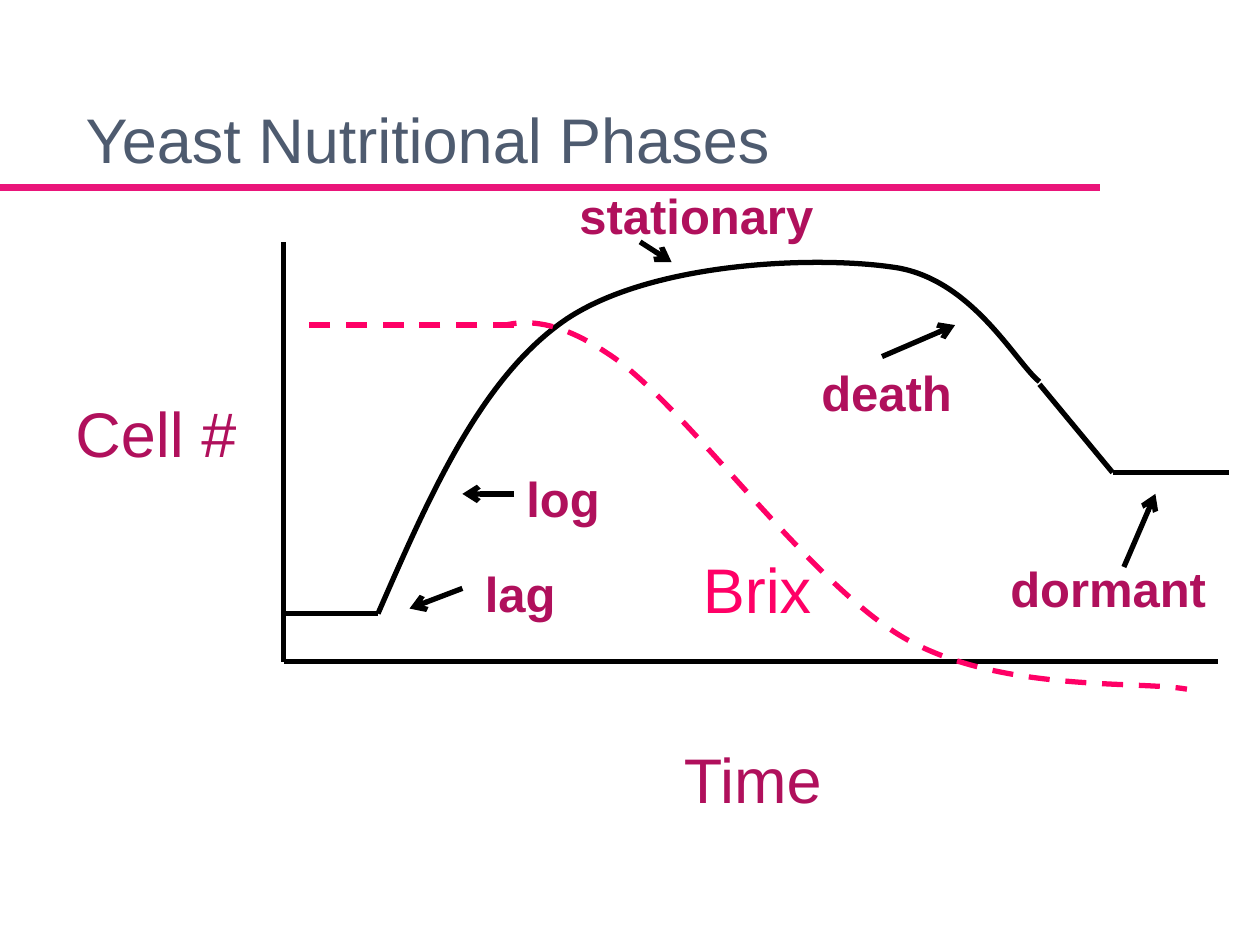
"""Build the slide on yeast nutritional phases: growth curve, Brix curve and labels."""
from lxml.etree import SubElement
from pptx import Presentation
from pptx.dml.color import RGBColor
from pptx.enum.dml import MSO_LINE
from pptx.enum.shapes import MSO_CONNECTOR, MSO_SHAPE
from pptx.enum.text import MSO_ANCHOR, MSO_AUTO_SIZE, PP_ALIGN
from pptx.oxml.ns import qn
from pptx.util import Inches, Pt

FONT = "Arial"
BLACK, WHITE, SLATE = "000000", "FFFFFF", "4E5B6F"
RULE_PINK, BRIX_PINK, PLUM = "EA157A", "FF0066", "B0105C"

TITLE = ("Yeast Nutritional Phases", 0.58, 0.75, 6.67)
NAMES = [
    ("Cell #", 0.5, 3.08, 1.5, PLUM),
    ("Time", 5.33, 5.83, 1.58, PLUM),
    ("Brix", 5.48, 4.32, 2.17, BRIX_PINK),
]
PHASES = [
    ("lag", 3.75, 4.42, 0.92),
    ("log", 4.08, 3.67, 3.33),
    ("stationary", 4.5, 1.42, 3.08),
    ("death", 6.42, 2.83, 2.42),
    ("dormant", 7.92, 4.38, 1.83),
]
TITLE_RULE = (0, 1.49), (8.73, 1.49)
ORIGIN = (2.25, 5.25)
AXIS_ENDS = [(2.25, 1.92), (9.67, 5.25)]
GROWTH_LINES = [
    ((2.25, 4.87), (3, 4.87)),
    ((8.25, 3.05), (8.83, 3.75)),
    ((8.83, 3.75), (9.75, 3.75)),
]
POINTERS = [
    ((3.67, 4.67), (3.25, 4.83)),
    ((4.08, 3.92), (3.67, 3.92)),
    ((7, 2.83), (7.58, 2.58)),
    ((5.08, 1.92), (5.33, 2.08)),
    ((8.92, 4.5), (9.17, 3.92)),
]
GROWTH_CURVE = [
    (3, 4.87), (3.41, 3.93), (3.82, 2.99), (4.5, 2.53), (5.18, 2.08),
    (6.46, 2.03), (7.08, 2.12), (7.71, 2.2), (8.06, 2.88), (8.25, 3.03),
]
BRIX_CURVE = [
    (3.67, 2.72), (3.96, 2.57), (4.25, 2.42), (4.83, 2.81), (5.42, 3.19),
    (6.4, 4.61), (7.17, 5.06), (7.93, 5.5), (9.04, 5.4), (9.42, 5.47),
]
BRIX_START = (4.08, 2.58), (2.33, 2.58)
BRIX_MASK = (3.33, 2.42, 0.67, 0.5)


def rgb(color):
    return RGBColor.from_string(color)


def style_line(line, color, width, dashed=False):
    line.color.rgb = rgb(color)
    line.width = Pt(width)
    if dashed:
        line.dash_style = MSO_LINE.DASH


def write(shape, words, size, color, bold=False):
    frame = shape.text_frame
    frame.word_wrap = True
    frame.auto_size = MSO_AUTO_SIZE.SHAPE_TO_FIT_TEXT
    frame.vertical_anchor = MSO_ANCHOR.TOP
    paragraph = frame.paragraphs[0]
    paragraph.alignment = PP_ALIGN.LEFT
    run = paragraph.add_run()
    run.text = words
    run.font.name, run.font.size, run.font.bold = FONT, Pt(size), bold
    run.font.color.rgb = rgb(color)


def add_label(slide, words, left, top, width, height, size, color, bold=False):
    label = slide.shapes.add_textbox(*map(Inches, (left, top, width, height)))
    write(label, words, size, color, bold)


def add_line(slide, start, end, color=BLACK, width=3, dashed=False, arrow=False):
    connector = slide.shapes.add_connector(
        MSO_CONNECTOR.STRAIGHT, *map(Inches, start + end))
    style_line(connector.line, color, width, dashed)
    properties = connector._element.spPr
    if arrow:
        SubElement(properties.find(qn("a:ln")), qn("a:tailEnd"), type="arrow")
    SubElement(properties, qn("a:effectLst"))


def add_curve(slide, points, color, dashed=False):
    start, *controls = [(Inches(x), Inches(y)) for x, y in points]
    builder = slide.shapes.build_freeform(*start)
    builder.add_line_segments(controls, close=False)
    curve = builder.convert_to_shape()
    curve.shadow.inherit = False
    curve.fill.background()
    style_line(curve.line, color, 3, dashed)
    outline = next(curve._element.iter(qn("a:path")))
    segments = outline.findall(qn("a:lnTo"))
    for first in range(0, len(segments), 3):
        bezier = SubElement(outline, qn("a:cubicBezTo"))
        for segment in segments[first:first + 3]:
            bezier.append(segment[0])
            outline.remove(segment)


def main():
    deck = Presentation()
    deck.slide_width, deck.slide_height = Inches(10), Inches(7.5)
    slide = deck.slides.add_slide(deck.slide_layouts[5])

    add_line(slide, *TITLE_RULE, RULE_PINK, 4)
    words, left, top, width = TITLE
    title = slide.shapes.title
    title.left, title.top, title.width, title.height = map(
        Inches, (left, top, width, 0.7))
    write(title, words, 36, SLATE)

    for end in AXIS_ENDS:
        add_line(slide, ORIGIN, end, width=2.5)
    for start, end in GROWTH_LINES:
        add_line(slide, start, end)
    add_curve(slide, GROWTH_CURVE, BLACK)

    add_curve(slide, BRIX_CURVE, BRIX_PINK, dashed=True)
    mask = slide.shapes.add_shape(MSO_SHAPE.RECTANGLE, *map(Inches, BRIX_MASK))
    mask.shadow.inherit = False
    mask.fill.solid()
    mask.fill.fore_color.rgb = rgb(WHITE)
    style_line(mask.line, WHITE, 0.75)
    add_line(slide, *BRIX_START, BRIX_PINK, dashed=True)

    for words, left, top, width, color in NAMES:
        add_label(slide, words, left, top, width, 0.7, 36, color)
    for words, left, top, width in PHASES:
        add_label(slide, words, left, top, width, 0.57, 28, PLUM, bold=True)
    for start, end in POINTERS:
        add_line(slide, start, end, arrow=True)

    deck.save("out.pptx")


if __name__ == "__main__":
    main()
